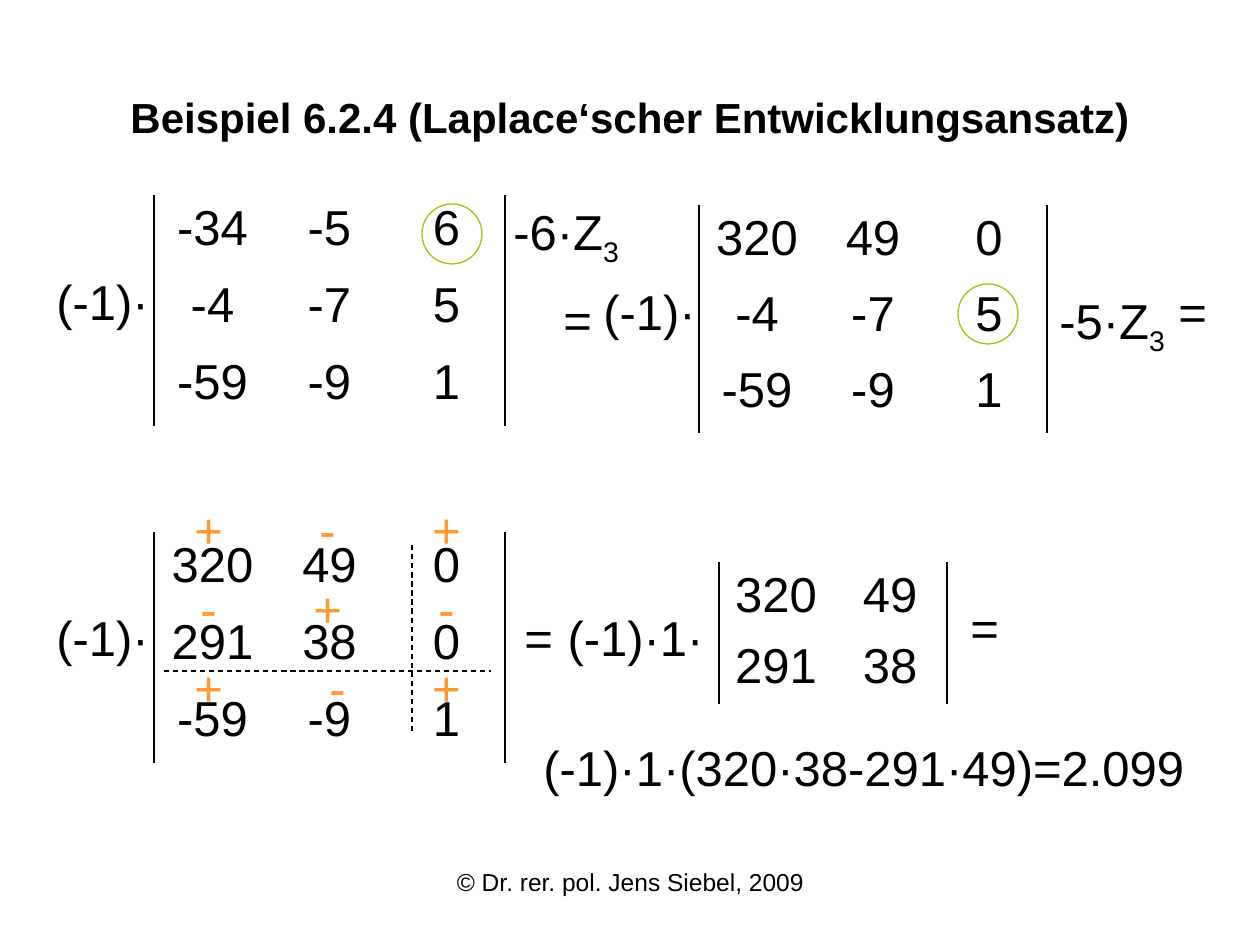
"""Build the slide on Laplace expansion of a determinant."""
from dataclasses import dataclass

from lxml.etree import SubElement
from pptx import Presentation
from pptx.dml.color import RGBColor
from pptx.enum.dml import MSO_LINE_DASH_STYLE as Dash
from pptx.enum.shapes import MSO_CONNECTOR as Connector, MSO_SHAPE as Shape
from pptx.enum.text import MSO_ANCHOR as Anchor, MSO_AUTO_SIZE as AutoSize, PP_ALIGN as Align
from pptx.oxml import parse_xml
from pptx.oxml.ns import nsdecls, qn
from pptx.util import Emu, Pt

EMU_PER_PX = 914400 / 126


def px(length):
    return Emu(round(length * EMU_PER_PX))


@dataclass(frozen=True)
class Theme:
    font: str = "Arial"
    ink: str = "000000"
    sign: str = "FF9933"
    pivot: str = "99CC00"
    title: int = 24
    math: int = 28
    footer: int = 14
    thin: float = 0.75
    bar: int = 12700


class Board:
    """Draws the elements of one slide in one theme."""

    def __init__(self, slide, theme):
        self.slide = slide
        self.theme = theme

    def format(self, frame, size, color=None, align=Align.LEFT, bold=False):
        for paragraph in frame.paragraphs:
            paragraph.alignment = align
            for run in paragraph.runs:
                run.font.name = self.theme.font
                run.font.size = Pt(size)
                run.font.bold = bold
                run.font.color.rgb = RGBColor.from_string(color or self.theme.ink)

    def title(self, text, left, top, width, height):
        heading = self.slide.shapes.title
        heading.left, heading.top = px(left), px(top)
        heading.width, heading.height = px(width), px(height)
        frame = heading.text_frame
        frame.text = text
        frame.vertical_anchor = Anchor.MIDDLE
        self.format(frame, self.theme.title, align=Align.CENTER, bold=True)

    def text(self, text, left, top, width, height=72, size=None, subscript="", **style):
        box = self.slide.shapes.add_textbox(px(left), px(top), px(width), px(height))
        frame = box.text_frame
        frame.word_wrap = True
        frame.auto_size = AutoSize.SHAPE_TO_FIT_TEXT if size is None else AutoSize.NONE
        frame.text = text
        if subscript:
            index = frame.paragraphs[0].add_run()
            index.text = subscript
            index.font._element.set("baseline", "-25000")
        self.format(frame, size or self.theme.math, **style)

    def determinant(self, rows, left, top, column, row):
        count = len(rows[0])
        frame = self.slide.shapes.add_table(
            len(rows), count, px(left), px(top), px(column * count), px(row * len(rows)))
        table = frame.table
        table.first_row = table.horz_banding = False
        for line in table.rows:
            line.height = px(row)
        for c, stripe in enumerate(table.columns):
            stripe.width = px(column)
            for r, values in enumerate(rows):
                cell = table.cell(r, c)
                cell.text_frame.text = values[c]
                cell.fill.background()
                self.format(cell.text_frame, self.theme.math, align=Align.CENTER)
                self.borders(cell, {"L": c == 0, "R": c == count - 1, "T": False, "B": False})

    def borders(self, cell, sides):
        properties = cell._tc.get_or_add_tcPr()
        solid = f'<a:solidFill><a:srgbClr val="{self.theme.ink}"/></a:solidFill>'
        for position, (side, drawn) in enumerate(sides.items()):
            paint = solid if drawn else "<a:noFill/>"
            properties.insert(position, parse_xml(
                f'<a:ln{side} {nsdecls("a")} w="{self.theme.bar}">{paint}</a:ln{side}>'))

    def strike(self, x1, y1, x2, y2):
        line = self.slide.shapes.add_connector(Connector.STRAIGHT, px(x1), px(y1), px(x2), px(y2))
        line.line.color.rgb = RGBColor.from_string(self.theme.ink)
        line.line.width = Pt(self.theme.thin)
        line.line.dash_style = Dash.DASH
        SubElement(line._element.spPr, qn("a:effectLst"))

    def circle(self, left, top, size=60):
        ring = self.slide.shapes.add_shape(Shape.OVAL, px(left), px(top), px(size), px(size))
        ring.shadow.inherit = False
        ring.fill.background()
        ring.line.color.rgb = RGBColor.from_string(self.theme.pivot)
        ring.line.width = Pt(self.theme.thin)


def main():
    deck = Presentation()
    deck.slide_width, deck.slide_height = px(1260), px(945)
    theme = Theme()
    board = Board(deck.slides.add_slide(deck.slide_layouts[5]), theme)

    board.text("© Dr. rer. pol. Jens Siebel, 2009", 431, 861, 399, 66,
               size=theme.footer, align=Align.CENTER)
    board.title("Beispiel 6.2.4 (Laplace‘scher Entwicklungsansatz)", 63, 38, 1134, 158)

    last = ["-59", "-9", "1"]
    middle = ["-4", "-7", "5"]
    minor = [["320", "49"], ["291", "38"]]
    board.determinant([["-34", "-5", "6"], middle, last], 154, 195, 117, 77)
    board.determinant([minor[0] + ["0"], middle, last], 699, 205, 116, 76)
    board.determinant([row + ["0"] for row in minor] + [last], 154, 532, 117, 77)
    board.determinant(minor, 719, 562, 114, 71)

    for left, top in ((44, 265), (591, 275), (44, 601)):
        board.text("(-1)·", left, top, 128 if left > 44 else 118)
    for left, top in ((551, 283), (1166, 275), (512, 601), (958, 591)):
        board.text("=", left, top, 69)
    for operation, left, top in (("-6·Z", 501, 195), ("-5·Z", 1047, 284)):
        board.text(operation, left, top, 189, subscript="3")
    board.text("(-1)·1·", 551, 601, 169, align=Align.CENTER)
    board.text("(-1)·1·(320·38-291·49)=2.099", 531, 731, 675)

    for r, signs in enumerate(("+-+", "-+-", "+-+")):
        for c, sign in enumerate(signs):
            nudge = 10 if (r, c) == (2, 1) else 0
            board.text(sign, 174 + 119 * c + nudge, 493 + 79 * r, 69,
                       color=theme.sign, align=Align.CENTER)

    board.strike(412, 731, 412, 542)
    board.strike(164, 671, 491, 671)
    board.circle(422, 204)
    board.circle(958, 284)
    deck.save("out.pptx")


if __name__ == "__main__":
    main()
